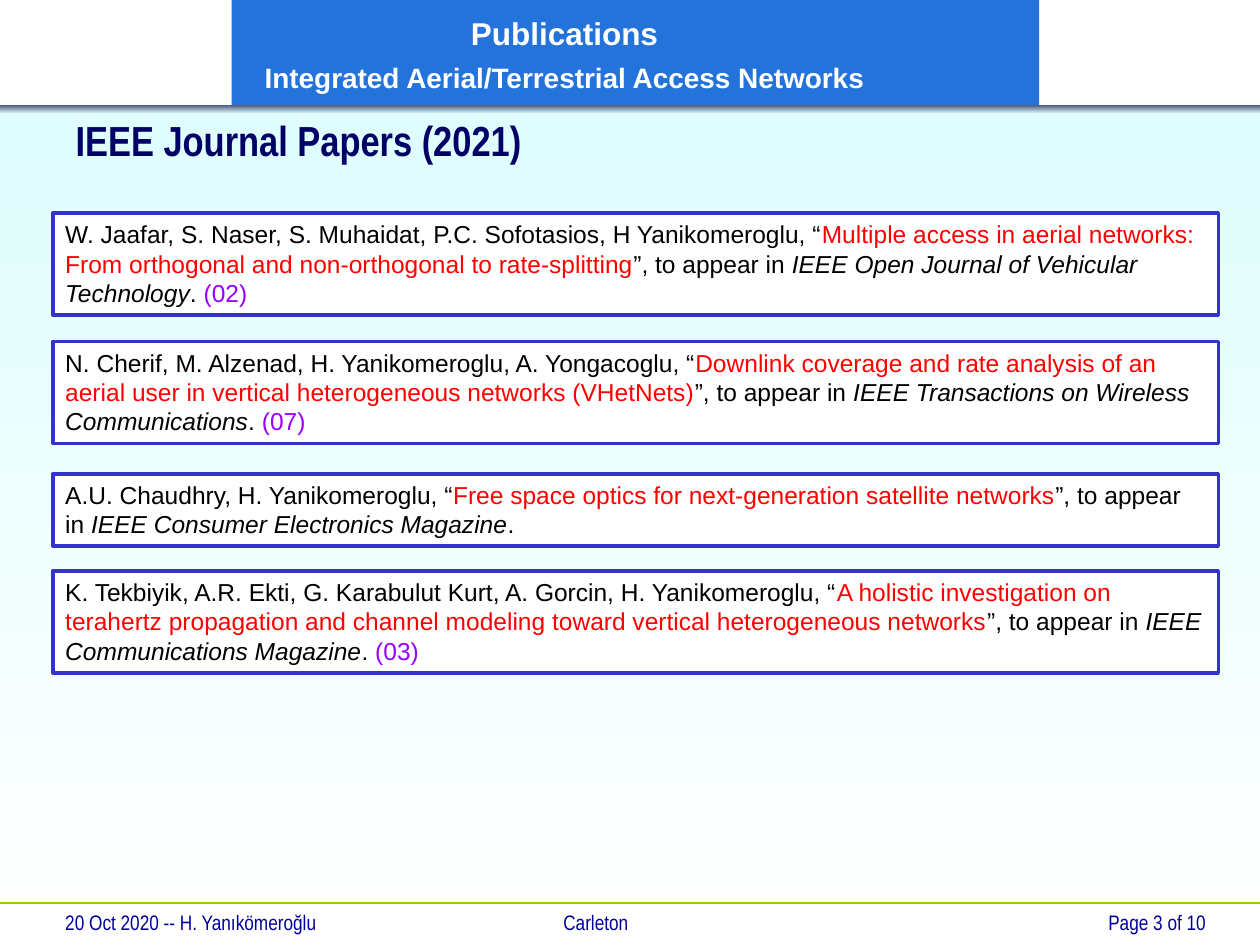
from lxml.etree import SubElement
from pptx import Presentation
from pptx.dml.color import RGBColor
from pptx.enum.shapes import MSO_CONNECTOR, MSO_SHAPE
from pptx.enum.text import MSO_ANCHOR, MSO_AUTO_SIZE, PP_ALIGN
from pptx.oxml.ns import qn
from pptx.util import Pt

WIDTH, HEIGHT = 720, 540
LEFT, BOX_WIDTH = 30.2, 666

THEME = {
    "font": "Arial", "narrow": "Arial Narrow",
    "heading": 24, "banner": 18, "subtitle": 16, "body": 14, "footer": 12,
    "white": "FFFFFF", "black": "000000", "banner_fill": "2473DB",
    "sky": "DFFDFD", "shade": "475577", "navy": "000066", "foot": "000099",
    "rule": "99CC00", "border": "3333CC", "paper": "FF0000", "count": "9900FF",
}

BANNER = [("Publications", "banner"),
          ("Integrated Aerial/Terrestrial Access Networks", "subtitle")]
HEADING = "IEEE Journal Papers (2021)"
FOOTER = "20 Oct 2020 -- H. Yanıkömeroğlu\tCarleton"
PAGE_NUMBER = "Page 3 of 10"

# top, height, authors, paper, journal, count
PAPERS = [
    (121.7, 58.4, "W. Jaafar, S. Naser, S. Muhaidat, P.C. Sofotasios, H Yanikomeroglu",
     "Multiple access in aerial networks: From orthogonal and non-orthogonal to rate-splitting",
     "IEEE Open Journal of Vehicular Technology", "(02)"),
    (195.1, 58.4, "N. Cherif, M. Alzenad, H. Yanikomeroglu, A. Yongacoglu",
     "Downlink coverage and rate analysis of an aerial user in vertical "
     "heterogeneous networks (VHetNets)",
     "IEEE Transactions on Wireless Communications", "(07)"),
    (270.7, 41.2, "A.U. Chaudhry, H. Yanikomeroglu",
     "Free space optics for next-generation satellite networks",
     "IEEE Consumer Electronics Magazine", ""),
    (326.2, 58.4, "K. Tekbiyik, A.R. Ekti, G. Karabulut Kurt, A. Gorcin, H. Yanikomeroglu",
     "A holistic investigation on terahertz propagation and channel modeling "
     "toward vertical heterogeneous networks",
     "IEEE Communications Magazine", "(03)"),
]


def color(name):
    return RGBColor.from_string(THEME[name])


def add_span(para, text, size, ink, font="font", bold=False, italic=False):
    span = para.add_run()
    span.text = text
    span.font.name = THEME[font]
    span.font.size = Pt(THEME[size])
    span.font.color.rgb = color(ink)
    span.font.bold = bold
    span.font.italic = italic


def add_box(page, left, top, width, height, fill=None, border=None):
    box = page.shapes.add_shape(MSO_SHAPE.RECTANGLE, Pt(left), Pt(top), Pt(width), Pt(height))
    box.shadow.inherit = False
    if fill:
        box.fill.solid()
        box.fill.fore_color.rgb = color(fill)
    if border:
        box.line.color.rgb = color(border)
        box.line.width = Pt(2)
    else:
        box.line.fill.background()
    return box


def add_fade(page, top, height, start, end):
    """Full-width band that fades downwards from start to end."""
    box = add_box(page, 0, top, WIDTH, height)
    box.fill.gradient()
    box.fill.gradient_angle = 270
    for stop, name in zip(box.fill.gradient_stops, (start, end)):
        stop.color.rgb = color(name)


def add_banner(page):
    box = add_box(page, 132.3, 0, 461.5, 60, "banner_fill")
    frame = box.text_frame
    frame.vertical_anchor = MSO_ANCHOR.MIDDLE
    frame.margin_right = Pt(88)
    for index, (text, size) in enumerate(BANNER):
        para = frame.add_paragraph() if index else frame.paragraphs[0]
        para.alignment = PP_ALIGN.CENTER
        para.line_spacing = 1.1
        if index:
            para.space_before = Pt(3.2)
        add_span(para, text, size, "white", bold=True)


def add_footer(page):
    rule = page.shapes.add_connector(MSO_CONNECTOR.STRAIGHT, 0, Pt(516), Pt(WIDTH), Pt(516))
    rule.line.color.rgb = color("rule")
    rule.line.width = Pt(0.75)
    SubElement(rule._element.spPr, qn("a:effectLst"))
    for text, left, width, align in ((FOOTER, LEFT, 450, PP_ALIGN.LEFT),
                                     (PAGE_NUMBER, 540, 156.2, PP_ALIGN.RIGHT)):
        box = page.shapes.add_textbox(Pt(left), Pt(516), Pt(width), Pt(22))
        box.text_frame.word_wrap = True
        para = box.text_frame.paragraphs[0]
        para.alignment = align
        if "\t" in text:
            tabs = SubElement(para._p.get_or_add_pPr(), qn("a:tabLst"))
            SubElement(tabs, qn("a:tab"), pos=str(Pt(284.6)), algn="l")
        add_span(para, text, "footer", "foot", "narrow")


def add_heading(page):
    title = page.shapes.title
    title.left, title.top, title.width, title.height = Pt(36), Pt(65), Pt(498), Pt(30)
    frame = title.text_frame
    frame.auto_size = MSO_AUTO_SIZE.NONE
    frame.vertical_anchor = MSO_ANCHOR.MIDDLE
    para = frame.paragraphs[0]
    para.alignment = PP_ALIGN.LEFT
    add_span(para, HEADING, "heading", "navy", "narrow", bold=True)


def add_paper(page, top, height, authors, paper, journal, count):
    box = add_box(page, LEFT, top, BOX_WIDTH, height, "white", "border")
    frame = box.text_frame
    frame.word_wrap = True
    frame.vertical_anchor = MSO_ANCHOR.TOP
    para = frame.paragraphs[0]
    para.alignment = PP_ALIGN.LEFT
    add_span(para, f"{authors}, “", "body", "black")
    add_span(para, paper, "body", "paper")
    add_span(para, "”, to appear in ", "body", "black")
    add_span(para, journal, "body", "black", italic=True)
    add_span(para, ". " if count else ".", "body", "black")
    if count:
        add_span(para, count, "body", "count")


def main():
    deck = Presentation()
    deck.slide_width, deck.slide_height = Pt(WIDTH), Pt(HEIGHT)
    page = deck.slides.add_slide(deck.slide_layouts[5])
    add_fade(page, 62, HEIGHT - 62, "sky", "white")
    add_footer(page)
    add_fade(page, 60, 5, "shade", "sky")
    add_banner(page)
    add_heading(page)
    # The title placeholder comes first in the tree; bring it above the background.
    page.shapes._spTree.append(page.shapes.title._element)
    for entry in PAPERS:
        add_paper(page, *entry)
    deck.save("out.pptx")


if __name__ == "__main__":
    main()
